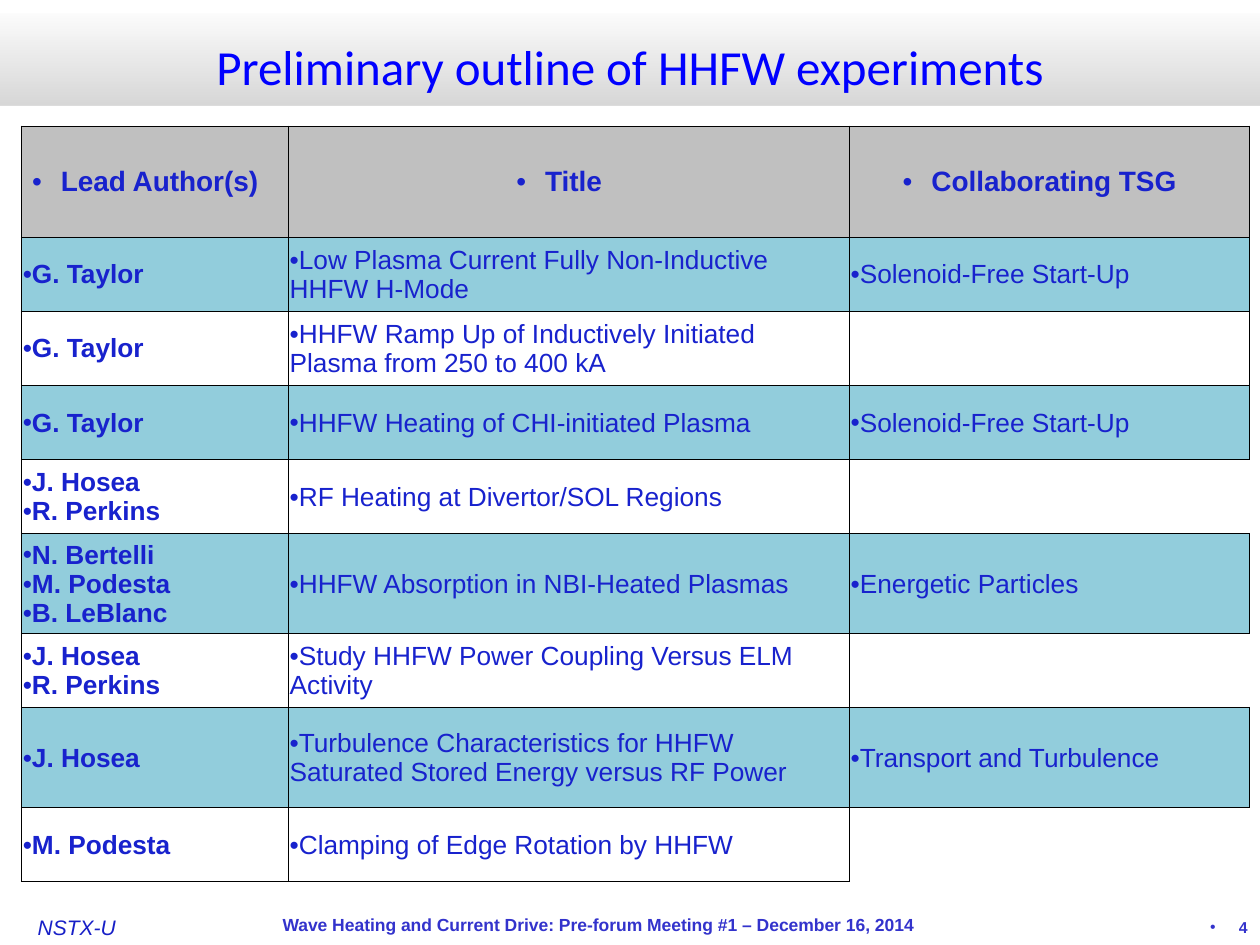
from lxml.etree import SubElement
from pptx import Presentation
from pptx.dml.color import RGBColor
from pptx.enum.text import MSO_ANCHOR as Anchor, MSO_AUTO_SIZE as AutoSize, PP_ALIGN as Align
from pptx.oxml.ns import qn
from pptx.util import Cm, Pt

COLORS = {
    "title": "0000FF", "table": "1822CD", "brand": "171FC7", "footer": "3333CC",
    "header": "C0C0C0", "band": "92CDDC", "plain": "FFFFFF", "border": "000000",
    "bar_top": "F8F8F8", "bar_bottom": "B2B2B2",
}
HEADINGS = ("Lead Author(s)", "Title", "Collaborating TSG")
EXPERIMENTS = [
    (["G. Taylor"], "Low Plasma Current Fully Non-Inductive HHFW H-Mode", "Solenoid-Free Start-Up"),
    (["G. Taylor"], "HHFW Ramp Up of Inductively Initiated Plasma from 250 to 400 kA", ""),
    (["G. Taylor"], "HHFW Heating of CHI-initiated Plasma", "Solenoid-Free Start-Up"),
    (["J. Hosea", "R. Perkins"], "RF Heating at Divertor/SOL Regions", ""),
    (["N. Bertelli", "M. Podesta", "B. LeBlanc"], "HHFW Absorption in NBI-Heated Plasmas",
     "Energetic Particles"),
    (["J. Hosea", "R. Perkins"], "Study HHFW Power Coupling Versus ELM Activity", ""),
    (["J. Hosea"], "Turbulence Characteristics for HHFW Saturated Stored Energy versus RF Power",
     "Transport and Turbulence"),
    (["M. Podesta"], "Clamping of Edge Rotation by HHFW", ""),
]
COLUMN_WIDTHS = (5.38, 11.31, 8.06)
ROW_HEIGHTS = (2.24, 1.49, 1.49, 1.5, 1.49, 2.02, 1.49, 2.02, 1.49)
HANGING = 0.58
# Cells whose outer edges stay open: (row, column) -> sides
OPEN_SIDES = {(4, 2): "R", (6, 2): "R", (8, 2): "RB"}


def rgb(name):
    return RGBColor.from_string(COLORS[name])


def add_run(paragraph, text, size, color, font="Arial", bold=False, italic=False):
    run = paragraph.add_run()
    run.text = text
    run.font.name, run.font.size = font, Pt(size)
    run.font.bold, run.font.italic = bold, italic
    run.font.color.rgb = rgb(color)


def add_bullet(paragraph, hanging=0):
    properties = paragraph._p.get_or_add_pPr()
    properties.set("marL", "0")
    properties.set("indent", str(-Cm(hanging)))
    SubElement(properties, qn("a:buFont"), typeface="Arial")
    SubElement(properties, qn("a:buChar"), char="•")


def add_title(slide, left, top, width, height):
    title = slide.shapes.title
    title.left, title.top, title.width, title.height = map(Cm, (left, top, width, height))
    # Translucent grey gradient bar
    title.fill.gradient()
    title.fill.gradient_angle = 270
    for stop, name in zip(title.fill.gradient_stops, ("bar_top", "bar_bottom")):
        stop.color.rgb = rgb(name)
    for color in title._element.spPr.iter(qn("a:srgbClr")):
        SubElement(color, qn("a:alpha"), val="51000")
    frame = title.text_frame
    frame.auto_size, frame.vertical_anchor = AutoSize.NONE, Anchor.TOP
    paragraph = frame.paragraphs[0]
    paragraph.alignment, paragraph.line_spacing = Align.CENTER, Pt(43.2)
    add_run(paragraph, "Preliminary outline of HHFW experiments", 28, "title", "Calibri")


def format_cell(cell, fill, open_sides=""):
    properties = cell._tc.get_or_add_tcPr()
    for side in "LRTB":
        line = SubElement(properties, qn(f"a:ln{side}"), w=str(Pt(0.5)))
        if side in open_sides:
            SubElement(line, qn("a:noFill"))
        else:
            solid = SubElement(line, qn("a:solidFill"))
            SubElement(solid, qn("a:srgbClr"), val=COLORS["border"])
    cell.fill.solid()
    cell.fill.fore_color.rgb = rgb(fill)
    cell.vertical_anchor = Anchor.MIDDLE
    cell.margin_left = cell.margin_right = cell.margin_top = Cm(0.03)
    cell.margin_bottom = 0


def fill_cell(cell, lines, size, bold, alignment, hanging=0):
    frame = cell.text_frame
    for index, text in enumerate(lines):
        paragraph = frame.add_paragraph() if index else frame.paragraphs[0]
        add_bullet(paragraph, hanging)
        paragraph.alignment = alignment
        add_run(paragraph, text, size, "table", bold=bold)


def add_experiment_table(slide, left, top):
    frame = slide.shapes.add_table(len(ROW_HEIGHTS), len(COLUMN_WIDTHS), Cm(left), Cm(top),
                                   Cm(sum(COLUMN_WIDTHS)), Cm(sum(ROW_HEIGHTS)))
    table = frame.table
    table.first_row = table.horz_banding = False
    for column, width in zip(table.columns, COLUMN_WIDTHS):
        column.width = Cm(width)
    for row, height in zip(table.rows, ROW_HEIGHTS):
        row.height = Cm(height)
    # Heading row
    for column, heading in enumerate(HEADINGS):
        format_cell(table.cell(0, column), "header")
        fill_cell(table.cell(0, column), [heading], 16, True, Align.CENTER, HANGING)
    # Experiments, every other row shaded
    for row, (authors, name, group) in enumerate(EXPERIMENTS, start=1):
        contents = (authors, [name], [group] if group else [])
        for column, lines in enumerate(contents):
            cell = table.cell(row, column)
            format_cell(cell, "band" if row % 2 else "plain", OPEN_SIDES.get((row, column), ""))
            fill_cell(cell, lines, 15, column == 0, Align.LEFT)


def add_footer_box(slide, box, alignment, anchor, inset=True):
    frame = slide.shapes.add_textbox(*map(Cm, box)).text_frame
    frame.word_wrap, frame.vertical_anchor = True, anchor
    if not inset:
        frame.margin_left = frame.margin_right = frame.margin_top = frame.margin_bottom = 0
    paragraph = frame.paragraphs[0]
    paragraph.alignment = alignment
    return paragraph


def add_footer(slide, left, top):
    # Machine name, meeting, page number
    machine = add_footer_box(slide, (left + 0.76, top + 0.15, 1.98, 0.51), Align.LEFT, Anchor.TOP, False)
    add_run(machine, "NSTX-U", 12, "brand", italic=True)
    meeting = add_footer_box(slide, (left + 2.11, top, 19.89, 0.76), Align.CENTER, Anchor.MIDDLE, False)
    meeting.line_spacing = 0.9
    add_run(meeting, "Wave Heating and Current Drive: Pre-forum Meeting #1 – December 16, 2014",
            10, "footer", bold=True)
    page = add_footer_box(slide, (left + 23.29, top + 0.18, 2.11, 0.43), Align.RIGHT, Anchor.MIDDLE)
    add_bullet(page, HANGING)
    add_run(page, "4", 9, "footer", bold=True)


def main():
    presentation = Presentation()
    presentation.slide_width, presentation.slide_height = Cm(25.4), Cm(19.05)
    slide = presentation.slides.add_slide(presentation.slide_layouts[5])
    add_title(slide, 0, 0.27, 25.4, 1.85)
    add_experiment_table(slide, 0.43, 2.54)
    add_footer(slide, 0, 18.29)
    presentation.save("out.pptx")


if __name__ == "__main__":
    main()
